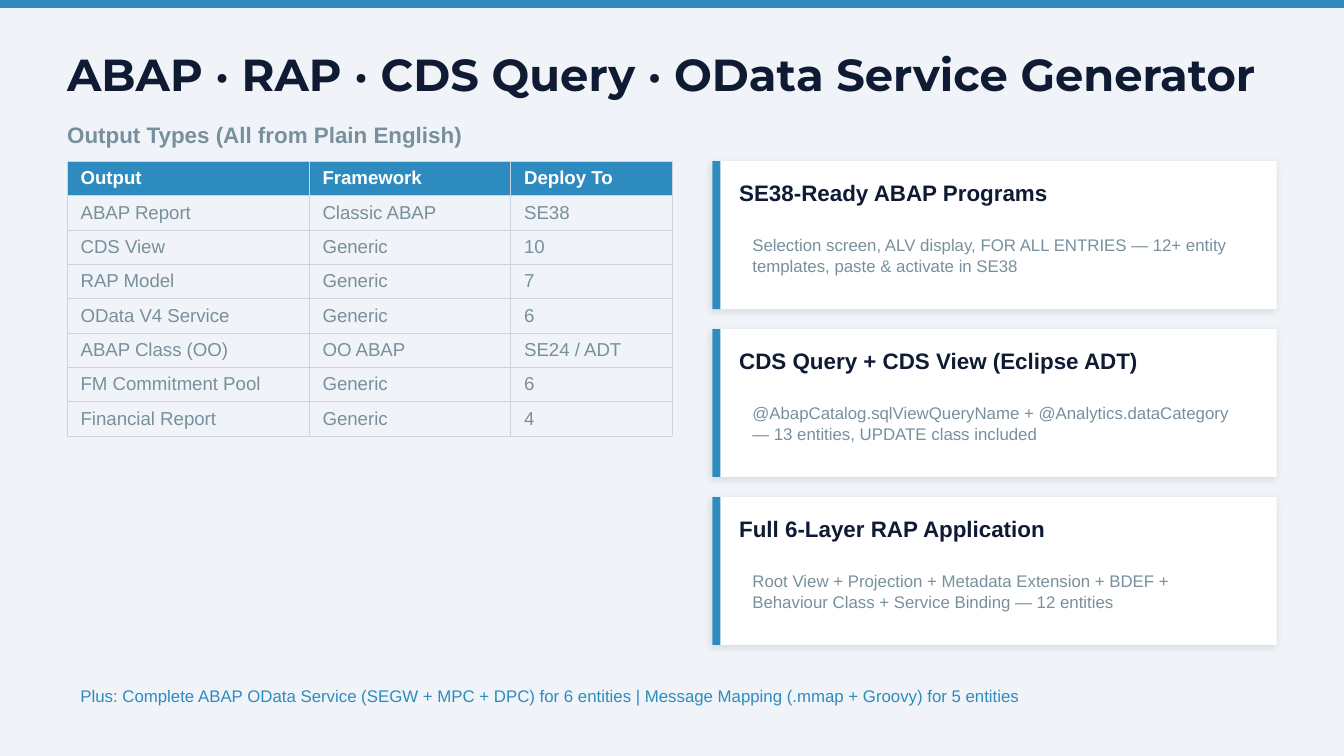
"""Build the slide on the output types of the ABAP, RAP, CDS and OData generator."""
from dataclasses import dataclass

from lxml.etree import SubElement
from pptx import Presentation
from pptx.dml.color import RGBColor as RGB
from pptx.enum.shapes import MSO_SHAPE as SHAPE
from pptx.enum.text import MSO_ANCHOR as ANCHOR
from pptx.oxml import parse_xml
from pptx.oxml.ns import nsdecls, qn
from pptx.util import Inches, Pt


@dataclass(frozen=True)
class Theme:
    page: str = "F0F4F8"
    accent: str = "2E8BC0"
    ink: str = "0F1B33"
    muted: str = "78909C"
    white: str = "FFFFFF"
    border: str = "CBD5E1"
    title_font: str = "Montserrat"
    body_font: str = "Arial"
    title: int = 24
    heading: int = 12
    cell: int = 10
    note: int = 9


T = Theme()
prs = Presentation()
prs.slide_width = Inches(10)
prs.slide_height = prs.slide_width * 9 // 16
UNIT = prs.slide_width // 100
slide = prs.slides.add_slide(prs.slide_layouts[6])
slide.background.fill.solid()
slide.background.fill.fore_color.rgb = RGB.from_string(T.page)


def add_rect(x, y, w, h, color):
    s = slide.shapes.add_shape(SHAPE.RECTANGLE, *(int(v * UNIT) for v in (x, y, w, h)))
    s.shadow.inherit = False
    s.fill.solid()
    s.fill.fore_color.rgb = RGB.from_string(color)
    s.line.fill.background()
    return s


def add_run(tf, text, size, color, bold=False, font=T.body_font):
    r = tf.paragraphs[0].add_run()
    r.text = text
    r.font.name, r.font.size, r.font.bold = font, Pt(size), bold
    r.font.color.rgb = RGB.from_string(color)


LEFT, TOP, WIDTH = 5, 12, 90
add_rect(0, 0, 100, 0.6, T.accent)

rows = [
    ("Output", "Framework", "Deploy To"),
    ("ABAP Report", "Classic ABAP", "SE38"),
    ("CDS View", "Generic", "10"),
    ("RAP Model", "Generic", "7"),
    ("OData V4 Service", "Generic", "6"),
    ("ABAP Class (OO)", "OO ABAP", "SE24 / ADT"),
    ("FM Commitment Pool", "Generic", "6"),
    ("Financial Report", "Generic", "4"),
]
col_widths = (18, 15, 12)
row_height = 2.5
table = slide.shapes.add_table(
    len(rows), len(col_widths), LEFT * UNIT, TOP * UNIT,
    sum(col_widths) * UNIT, int(len(rows) * row_height * UNIT),
).table
table.horz_banding = False
for column, width in zip(table.columns, col_widths):
    column.width = width * UNIT
for i, row in enumerate(rows):
    for j, text in enumerate(row):
        cell = table.cell(i, j)
        for side in ("a:lnL", "a:lnR", "a:lnT", "a:lnB"):
            ln = SubElement(cell._tc.get_or_add_tcPr(), qn(side), w=str(Pt(0.5)))
            SubElement(SubElement(ln, qn("a:solidFill")), qn("a:srgbClr"), val=T.border)
        if i == 0:
            cell.fill.solid()
            cell.fill.fore_color.rgb = RGB.from_string(T.accent)
        else:
            cell.fill.background()
        add_run(cell.text_frame, text, T.cell, T.muted if i else T.white, i == 0)

texts = [
    (LEFT, 2.5, WIDTH, 6, False,
     ("ABAP · RAP · CDS Query · OData Service Generator", T.title, T.ink, True, T.title_font)),
    (LEFT, 8.5, 40, 3, False,
     ("Output Types (All from Plain English)", T.heading, T.muted, True)),
    (LEFT, 50, WIDTH, 3.5, True,
     ("Plus: Complete ABAP OData Service (SEGW + MPC + DPC) for 6 entities | "
      "Message Mapping (.mmap + Groovy) for 5 entities", T.note, T.accent)),
]

cards = [
    ("SE38-Ready ABAP Programs",
     "Selection screen, ALV display, FOR ALL ENTRIES — 12+ entity templates, "
     "paste & activate in SE38"),
    ("CDS Query + CDS View (Eclipse ADT)",
     "@AbapCatalog.sqlViewQueryName + @Analytics.dataCategory — 13 entities, "
     "UPDATE class included"),
    ("Full 6-Layer RAP Application",
     "Root View + Projection + Metadata Extension + BDEF + Behaviour Class + "
     "Service Binding — 12 entities"),
]
card_x, card_w, card_h, card_gap = 53, 42, 11, 1.5
for i, (heading, detail) in enumerate(cards):
    y = TOP + i * (card_h + card_gap)
    s = add_rect(card_x, y, card_w, card_h, T.white)
    s._element.spPr.find(qn("a:effectLst")).append(parse_xml(
        f'<a:outerShdw {nsdecls("a")} blurRad="{Pt(4)}" dist="{Pt(1.5)}" dir="{135 * 60000}" '
        'algn="bl" rotWithShape="0"><a:srgbClr val="000000"><a:alpha val="10000"/>'
        '</a:srgbClr></a:outerShdw>'))
    add_rect(card_x, y, 0.6, card_h, T.accent)
    texts += [
        (card_x + 2, y + 0.8, card_w - 4, 3, False, (heading, T.heading, T.ink, True)),
        (card_x + 2, y + 4, card_w - 4, 6, True, (detail, T.note, T.muted)),
    ]

for x, y, w, h, inset, run in texts:
    tf = slide.shapes.add_textbox(*(int(v * UNIT) for v in (x, y, w, h))).text_frame
    tf.word_wrap = True
    tf.vertical_anchor = ANCHOR.MIDDLE
    if not inset:
        tf.margin_left = tf.margin_right = tf.margin_top = tf.margin_bottom = 0
    add_run(tf, *run)

prs.save("out.pptx")
